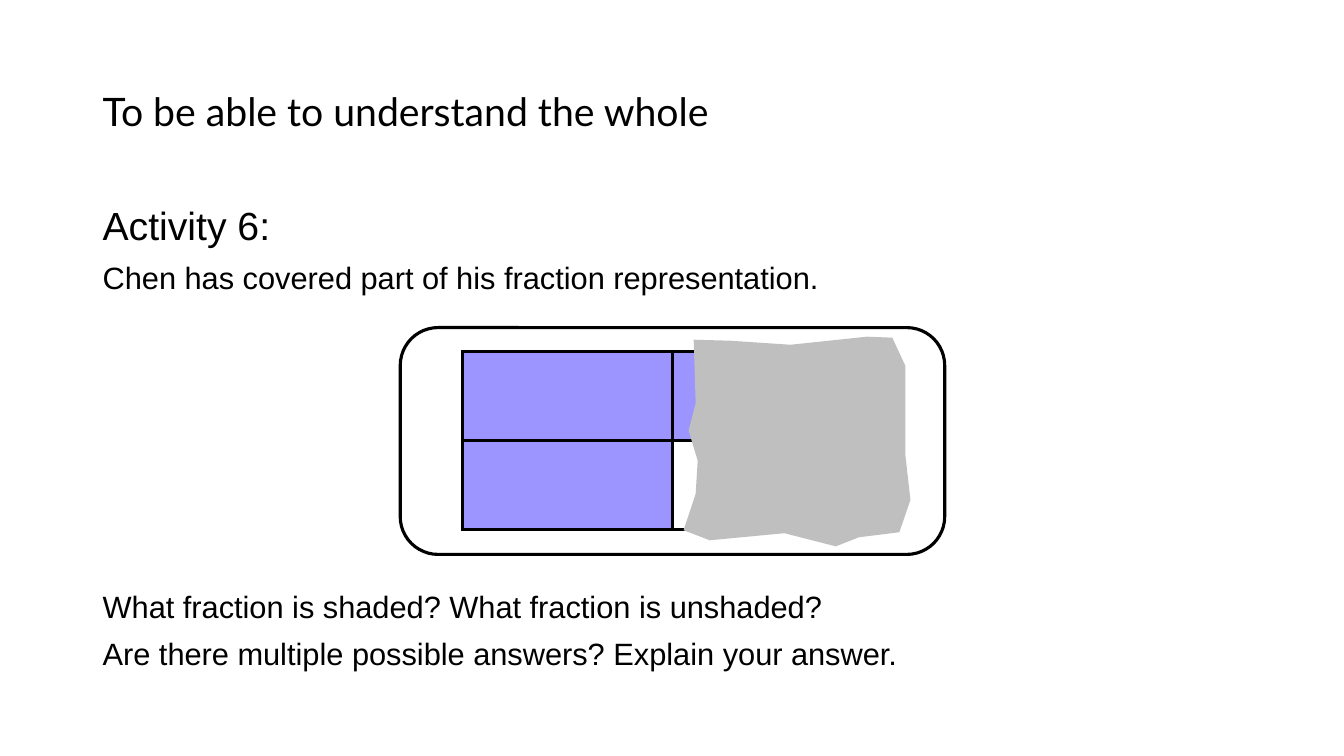
import collections

import pptx
import pptx.dml.color
import pptx.enum.shapes
import pptx.enum.text
import pptx.oxml.ns
import pptx.util
from lxml import etree

# Grid: 1333 columns by 750 rows, each 0.01 inch
UNIT = pptx.util.Inches(0.01)
COLUMNS, ROWS = 1333, 750

THEME = {
    "ink": "000000", "paper": "FFFFFF", "shaded": "9C94FF", "cover": "BFBFBF",
    "title": {"name": "Lato", "size": pptx.util.Pt(28)},
    "heading": {"name": "Arial", "size": pptx.util.Pt(28)},
    "body": {"name": "Arial", "size": pptx.util.Pt(22)},
    "outline": pptx.util.Pt(2.25),
    "gap": pptx.util.Pt(10),
}

Box = collections.namedtuple("Box", "left top width height")


def inside(box, left, top, width, height):
    return Box(box.left + left, box.top + top, width, height)


def emu(box):
    return [length * UNIT for length in box]


def colour(name):
    return pptx.dml.color.RGBColor.from_string(THEME[name])


def set_all(target, values):
    for name, value in values.items():
        setattr(target, name, value)


def paint(shape, fill, line=None):
    shape.shadow.inherit = False
    shape.fill.solid()
    shape.fill.fore_color.rgb = colour(fill)
    if line:
        shape.line.color.rgb = colour(line)
        shape.line.width = THEME["outline"]
    else:
        shape.line.fill.background()


def add_text(page, box, lines, anchor=pptx.enum.text.MSO_ANCHOR.TOP):
    frame = page.shapes.add_textbox(*emu(box)).text_frame
    set_all(frame, {"word_wrap": True, "vertical_anchor": anchor})
    for index, (text, style) in enumerate(lines):
        para = frame.add_paragraph() if index else frame.paragraphs[0]
        para.line_spacing = 0.9
        para.space_before = THEME["gap"] if index else pptx.util.Pt(0)
        span = para.add_run()
        span.text = text
        set_all(span.font, THEME[style])
        span.font.color.rgb = colour("ink")


def add_borders(cell):
    properties = cell._tc.get_or_add_tcPr()
    for side in ("lnL", "lnR", "lnT", "lnB"):
        border = etree.SubElement(properties, pptx.oxml.ns.qn(f"a:{side}"),
                                  w=str(THEME["outline"]))
        fill = etree.SubElement(border, pptx.oxml.ns.qn("a:solidFill"))
        etree.SubElement(fill, pptx.oxml.ns.qn("a:srgbClr"), val=THEME["ink"])


def add_fraction_table(page, box):
    fills = [["shaded", "shaded"], ["shaded", "paper"]]
    table = page.shapes.add_table(2, 2, *emu(box)).table
    set_all(table, {"first_row": False, "horz_banding": False})
    for row, names in enumerate(fills):
        for column, name in enumerate(names):
            cell = table.cell(row, column)
            add_borders(cell)
            cell.fill.solid()
            cell.fill.fore_color.rgb = colour(name)


def add_torn_cover(page, box):
    # Torn edge, in grid units from the corner of the box
    edge = [(10, 3), (12, 66), (5, 93), (14, 123), (12, 156), (0, 192), (26, 202),
            (100, 195), (151, 208), (174, 199), (214, 194), (225, 162), (220, 118),
            (220, 70), (220, 29), (207, 1), (182, 0), (106, 8), (46, 4)]
    points = [((box.left + x) * UNIT, (box.top + y) * UNIT) for x, y in edge]
    builder = page.shapes.build_freeform(*points[0])
    builder.add_line_segments(points[1:], close=True)
    paint(builder.convert_to_shape(), "cover")


def add_fraction_card(page, box):
    card = page.shapes.add_shape(
        pptx.enum.shapes.MSO_SHAPE.ROUNDED_RECTANGLE, *emu(box))
    paint(card, "paper", "ink")
    add_fraction_table(page, inside(box, 62, 24, 416, 176))
    add_torn_cover(page, inside(box, 281, 9, 225, 208))


def add_activity(page, box):
    # Task above the card, questions below it
    add_text(page, inside(box, 0, 0, box.width, 110), [
        ("Activity 6:", "heading"),
        ("Chen has covered part of his fraction representation.", "body"),
    ])
    add_fraction_card(page, inside(box, 305, 125, 540, 225))
    add_text(page, inside(box, 0, 382, box.width, 94), [
        ("What fraction is shaded? What fraction is unshaded?", "body"),
        ("Are there multiple possible answers? Explain your answer.", "body"),
    ])


def main():
    deck = pptx.Presentation()
    set_all(deck, {"slide_width": COLUMNS * UNIT, "slide_height": ROWS * UNIT})
    page = deck.slides.add_slide(deck.slide_layouts[6])
    add_text(page, Box(92, 40, 960, 145),
             [("To be able to understand the whole", "title")],
             pptx.enum.text.MSO_ANCHOR.MIDDLE)
    add_activity(page, Box(92, 200, 1150, 476))
    deck.save("out.pptx")


if __name__ == "__main__":
    main()
